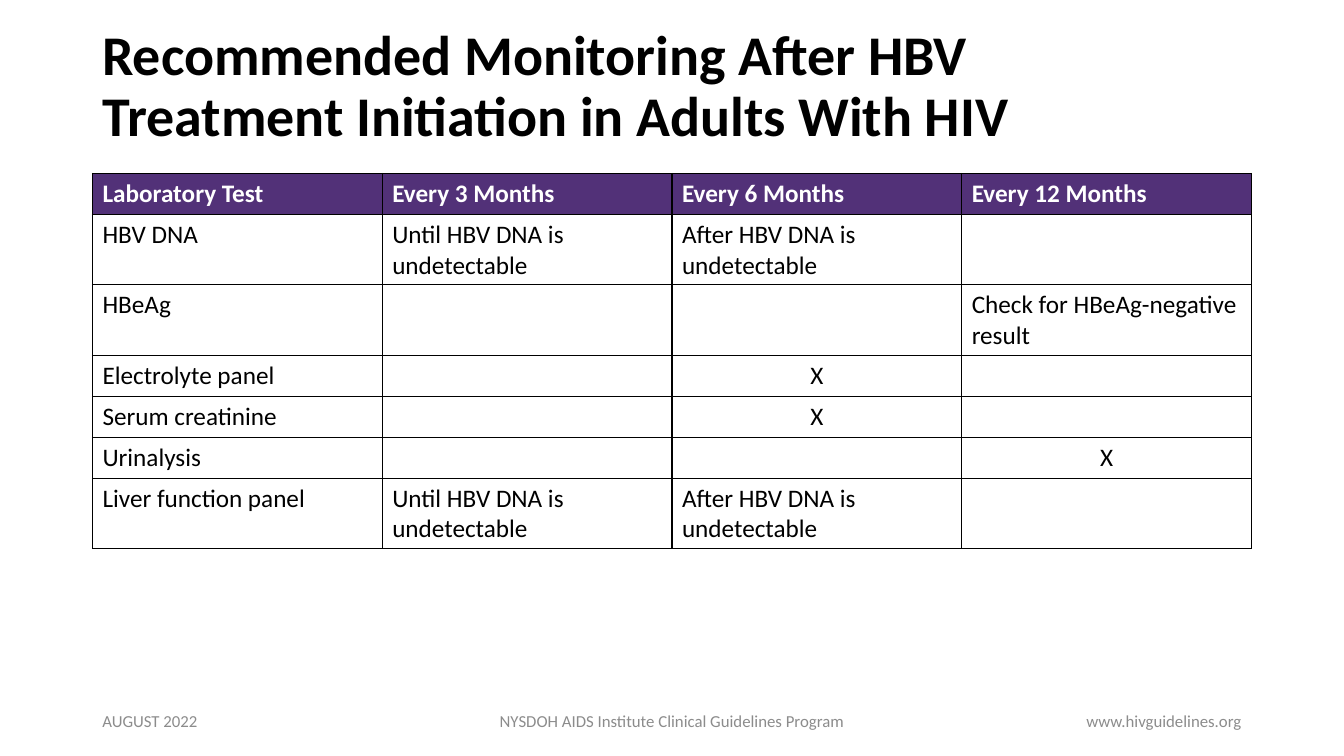
import dataclasses

import pptx
import pptx.dml.color
import pptx.enum.text
import pptx.oxml
import pptx.oxml.ns
import pptx.util
from pptx.util import Cm

ALIGN = pptx.enum.text.PP_ALIGN


@dataclasses.dataclass(frozen=True)
class Theme:
    font: str = "Calibri"
    ink: str = "000000"
    header_ink: str = "FFFFFF"
    header_fill: str = "523178"
    footer_ink: str = "8C8C8C"
    border: str = "000000"
    border_width: int = 1
    title_size: int = 40
    table_size: int = 18
    footer_size: int = 12


@dataclasses.dataclass(frozen=True)
class Box:
    left: float
    top: float
    width: float
    height: float

    def lengths(self):
        return Cm(self.left), Cm(self.top), Cm(self.width), Cm(self.height)


THEME = Theme()
TITLE = "Recommended Monitoring After HBV Treatment Initiation in Adults With HIV"
UNTIL = "Until HBV DNA is undetectable"
AFTER = "After HBV DNA is undetectable"
MARK = "X"
SCHEDULE = [
    ["Laboratory Test", "Every 3 Months", "Every 6 Months", "Every 12 Months"],
    ["HBV DNA", UNTIL, AFTER, ""],
    ["HBeAg", "", "", "Check for HBeAg-negative result"],
    ["Electrolyte panel", "", MARK, ""],
    ["Serum creatinine", "", MARK, ""],
    ["Urinalysis", "", "", MARK],
    ["Liver function panel", UNTIL, AFTER, ""],
]
FOOTER = [
    ("AUGUST 2022", 7.62, 0, ALIGN.LEFT),
    ("NYSDOH AIDS Institute Clinical Guidelines Program", 11.43, 0.5, ALIGN.CENTER),
    ("www.hivguidelines.org", 7.62, 1, ALIGN.RIGHT),
]


def add_run(paragraph, text, size, color, bold=False):
    run = paragraph.add_run()
    run.text = text
    run.font.name = THEME.font
    run.font.size = pptx.util.Pt(size)
    run.font.bold = bold
    run.font.color.rgb = pptx.dml.color.RGBColor.from_string(color)


def add_text(slide, box, text, size, color, bold=False, align=ALIGN.LEFT, spacing=1.0):
    frame = slide.shapes.add_textbox(*box.lengths()).text_frame
    frame.word_wrap = True
    frame.vertical_anchor = pptx.enum.text.MSO_ANCHOR.MIDDLE
    paragraph = frame.paragraphs[0]
    paragraph.alignment = align
    paragraph.line_spacing = spacing
    add_run(paragraph, text, size, color, bold)


def add_borders(cell):
    properties = cell._tc.get_or_add_tcPr()
    width = pptx.util.Pt(THEME.border_width)
    for side in ("lnL", "lnR", "lnT", "lnB"):
        properties.append(pptx.oxml.parse_xml(
            f'<a:{side} {pptx.oxml.ns.nsdecls("a")} w="{width}"><a:solidFill>'
            f'<a:srgbClr val="{THEME.border}"/></a:solidFill></a:{side}>'))


def add_title(slide, box):
    add_text(slide, box, TITLE, THEME.title_size, THEME.ink, bold=True, spacing=0.9)


def add_schedule(slide, box):
    table = slide.shapes.add_table(
        len(SCHEDULE), len(SCHEDULE[0]), *box.lengths()).table
    table.horz_banding = False
    for row_index, row in enumerate(SCHEDULE):
        header = row_index == 0
        for column_index, text in enumerate(row):
            cell = table.cell(row_index, column_index)
            add_borders(cell)
            if header:
                cell.fill.solid()
                cell.fill.fore_color.rgb = pptx.dml.color.RGBColor.from_string(
                    THEME.header_fill)
            else:
                cell.fill.background()
            if text:
                paragraph = cell.text_frame.paragraphs[0]
                paragraph.alignment = ALIGN.CENTER if text == MARK else ALIGN.LEFT
                add_run(paragraph, text, THEME.table_size,
                        THEME.header_ink if header else THEME.ink, header)


def add_footer(slide, box):
    for text, width, position, align in FOOTER:
        left = box.left + (box.width - width) * position
        add_text(slide, Box(left, box.top, width, box.height), text,
                 THEME.footer_size, THEME.footer_ink, align=align)


def main():
    presentation = pptx.Presentation()
    presentation.slide_width = Cm(33.87)
    presentation.slide_height = Cm(19.05)
    slide = presentation.slides.add_slide(presentation.slide_layouts[6])
    add_title(slide, Box(2.33, 0.38, 27, 3.68))
    add_schedule(slide, Box(2.33, 4.37, 29.21, 7.21))
    add_footer(slide, Box(2.33, 17.65, 29.21, 1.02))
    presentation.save("out.pptx")


if __name__ == "__main__":
    main()
